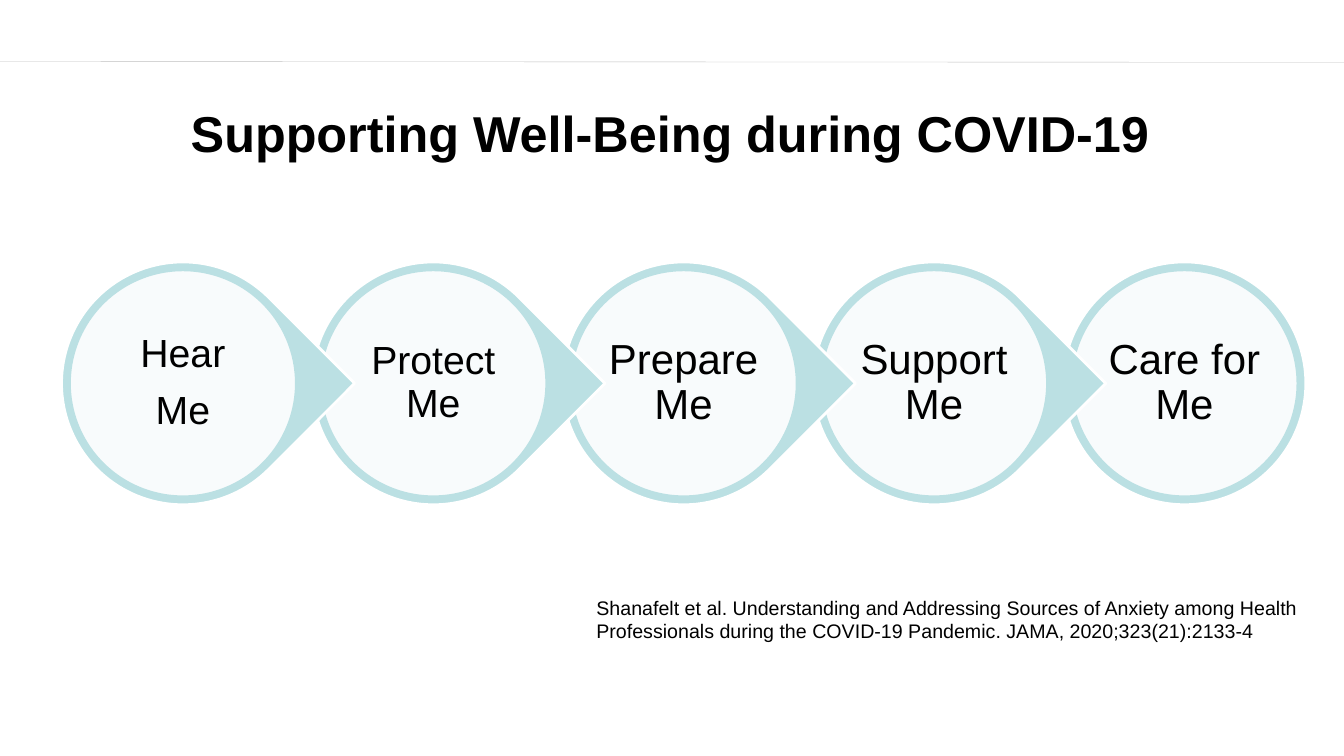
from lxml import etree
from pptx import Presentation
from pptx.dml.color import RGBColor
from pptx.enum import shapes, text
from pptx.oxml import ns
from pptx.util import Cm, Pt

BLACK = RGBColor(0x00, 0x00, 0x00)
WHITE = RGBColor(0xFF, 0xFF, 0xFF)
TEAL = RGBColor(0xBB, 0xE0, 0xE3)
GREY = RGBColor(0xBF, 0xBF, 0xBF)


def add_text(content, left, top, width, height, size, bold=False, align=text.PP_ALIGN.LEFT,
             anchor=text.MSO_ANCHOR.TOP, inset=None, line_spacing=1.0, gap=0, wrap=True):
    frame = slide.shapes.add_textbox(Cm(left), Cm(top), Cm(width), Cm(height)).text_frame
    frame.word_wrap = wrap
    frame.vertical_anchor = anchor
    if inset is not None:
        frame.margin_left = frame.margin_right = Cm(inset)
        frame.margin_top = frame.margin_bottom = Cm(inset)
    frame.text = content
    for index, paragraph in enumerate(frame.paragraphs):
        paragraph.alignment = align
        paragraph.line_spacing = line_spacing
        if index:
            paragraph.space_before = Pt(gap)
        paragraph.font.name = "Arial"
        paragraph.font.size = Pt(size)
        paragraph.font.bold = bold
        paragraph.font.color.rgb = BLACK


def add_round(kind, left, top, diameter, fill, line):
    shape = slide.shapes.add_shape(kind, Cm(left), Cm(top), Cm(diameter), Cm(diameter))
    shape.shadow.inherit = False
    shape.fill.solid()
    shape.fill.fore_color.rgb = fill
    shape.line.color.rgb = line
    shape.line.width = Pt(2)
    return shape


presentation = Presentation()
presentation.slide_width = Cm(33.87)
presentation.slide_height = Cm(19.05)
slide = presentation.slides.add_slide(presentation.slide_layouts[6])

rule = slide.shapes.add_connector(
    shapes.MSO_CONNECTOR.STRAIGHT, Cm(0), Cm(1.55), Cm(33.87), Cm(1.57))
rule.line.color.rgb = GREY
rule.line.width = Pt(0.25)
etree.SubElement(rule._element.spPr, ns.qn("a:effectLst"))

needs = [("Hear\nMe", 28), ("Protect Me", 28), ("Prepare Me", 30),
         ("Support Me", 30), ("Care for Me", 30)]
first_left, top, pitch = 1.55, 6.6, 6.31
outer, inner, label = 6.12, 5.72, 4.06
ring = (outer - inner) / 2
margin = (outer - label) / 2

for index, (need, size) in reversed(list(enumerate(needs))):
    left = first_left + index * pitch
    if index == len(needs) - 1:
        add_round(shapes.MSO_SHAPE.OVAL, left, top, outer, TEAL, WHITE)
    else:
        drop = add_round(shapes.MSO_SHAPE.TEAR, left, top, outer, TEAL, WHITE)
        drop.adjustments[0] = 1
        drop.rotation = 45
    disc = add_round(shapes.MSO_SHAPE.OVAL, left + ring, top + ring, inner, WHITE, TEAL)
    color = disc._element.spPr.find(ns.qn("a:solidFill")).find(ns.qn("a:srgbClr"))
    etree.SubElement(color, ns.qn("a:alpha"), val="90000")
    add_text(need, left + margin, top + margin, label, label, size,
             align=text.PP_ALIGN.CENTER, anchor=text.MSO_ANCHOR.MIDDLE,
             inset=0.1, line_spacing=0.9, gap=10)

add_text("Supporting Well-Being during COVID-19", 4.27, 2.46, 25.25, 3.18, 36,
         bold=True, align=text.PP_ALIGN.CENTER, wrap=False)
add_text("Shanafelt et al. Understanding and Addressing Sources of Anxiety among Health "
         "Professionals during the COVID-19 Pandemic. JAMA, 2020;323(21):2133-4",
         14.78, 14.88, 19.53, 1.45, 14)

presentation.save("out.pptx")
